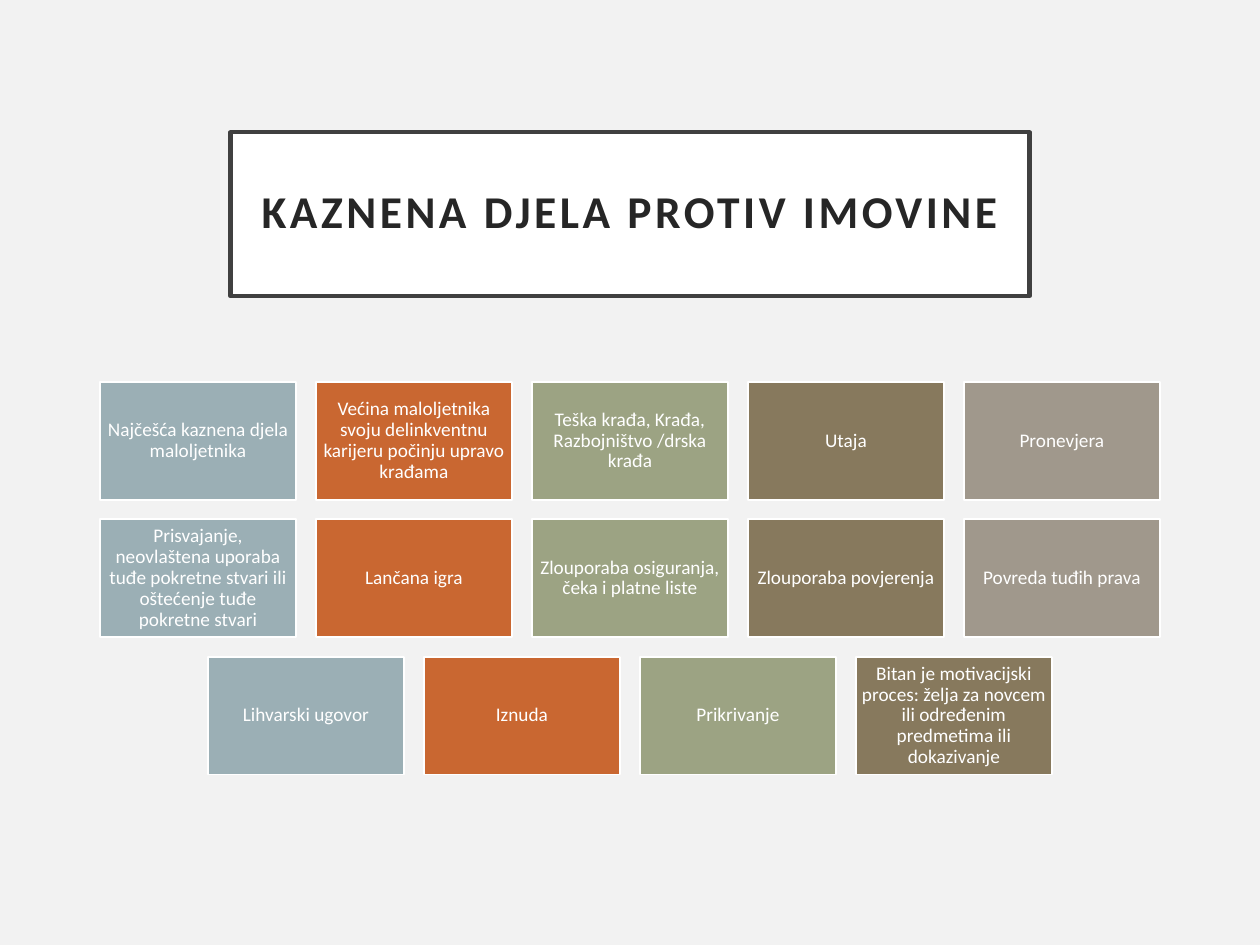
from pptx import Presentation
from pptx.dml.color import RGBColor
from pptx.enum.shapes import MSO_SHAPE as Shape
from pptx.enum.text import MSO_ANCHOR as Anchor, MSO_AUTO_SIZE as Fit, PP_ALIGN as Align
from pptx.util import Pt

WIDE, HIGH = 720, 540
CARD_W = 112.2
CARD_H = CARD_W * 0.6
GAP = CARD_W * 0.1
TOP = 218.2
HUES = ["9BAFB5", "C96731", "9CA383", "87795D", "A0988C"]
ROWS = [
    ["Najčešća kaznena djela maloljetnika",
     "Većina maloljetnika svoju delinkventnu karijeru počinju upravo krađama",
     "Teška krađa, Krađa, Razbojništvo /drska krađa",
     "Utaja",
     "Pronevjera"],
    ["Prisvajanje, neovlaštena uporaba tuđe pokretne stvari ili oštećenje tuđe pokretne stvari",
     "Lančana igra",
     "Zlouporaba osiguranja, čeka i platne liste",
     "Zlouporaba povjerenja",
     "Povreda tuđih prava"],
    ["Lihvarski ugovor",
     "Iznuda",
     "Prikrivanje",
     "Bitan je motivacijski proces: želja za novcem ili određenim predmetima ili dokazivanje"],
]


def paint(fmt, hue):
    """Give a fill, or the fill of a line or font, one solid colour."""
    fmt.solid()
    fmt.fore_color.rgb = RGBColor.from_string(hue)


def style(box, fill, edge, width):
    paint(box.fill, fill)
    paint(box.line.fill, edge)
    box.line.width = Pt(width)


def write(box, text, size, hue, inset, bold=False):
    frame = box.text_frame
    frame.text = text
    frame.word_wrap = True
    frame.auto_size = Fit.NONE
    frame.vertical_anchor = Anchor.MIDDLE
    frame.margin_left = frame.margin_right = Pt(inset)
    frame.margin_top = frame.margin_bottom = Pt(inset)
    para = frame.paragraphs[0]
    para.alignment = Align.CENTER
    para.line_spacing = 0.9
    font = para.font
    font.name = "Calibri"
    font.size = Pt(size)
    font.bold = bold
    paint(font.fill, hue)


def add_title(slide, text):
    box = slide.shapes.title
    box.left, box.top = Pt(131.8), Pt(75.6)
    box.width, box.height = Pt(456.4), Pt(93.6)
    style(box, "FFFFFF", "404040", 2.5)
    write(box, text, 26, "262626", 14.4, bold=True)
    # Letter spacing, in hundredths of a point
    run = box.text_frame.paragraphs[0].runs[0]
    run.font._element.set("spc", "200")


def add_card(slide, text, hue, left, top):
    box = slide.shapes.add_shape(
        Shape.RECTANGLE, Pt(left), Pt(top), Pt(CARD_W), Pt(CARD_H))
    box.shadow.inherit = False
    style(box, hue, "FFFFFF", 1)
    write(box, text, 11, "FFFFFF", 3.3)


def add_row(slide, texts, top):
    """Place one row of cards, centred on the slide."""
    step = CARD_W + GAP
    left = (WIDE - len(texts) * step + GAP) / 2
    for col, (text, hue) in enumerate(zip(texts, HUES)):
        add_card(slide, text, hue, left + col * step, top)


def main():
    deck = Presentation()
    deck.slide_width, deck.slide_height = Pt(WIDE), Pt(HIGH)
    slide = deck.slides.add_slide(deck.slide_layouts[5])
    paint(slide.background.fill, "F2F2F2")
    add_title(slide, "KAZNENA DJELA PROTIV IMOVINE")
    for row, texts in enumerate(ROWS):
        add_row(slide, texts, TOP + row * (CARD_H + GAP))
    deck.save("out.pptx")


if __name__ == "__main__":
    main()
